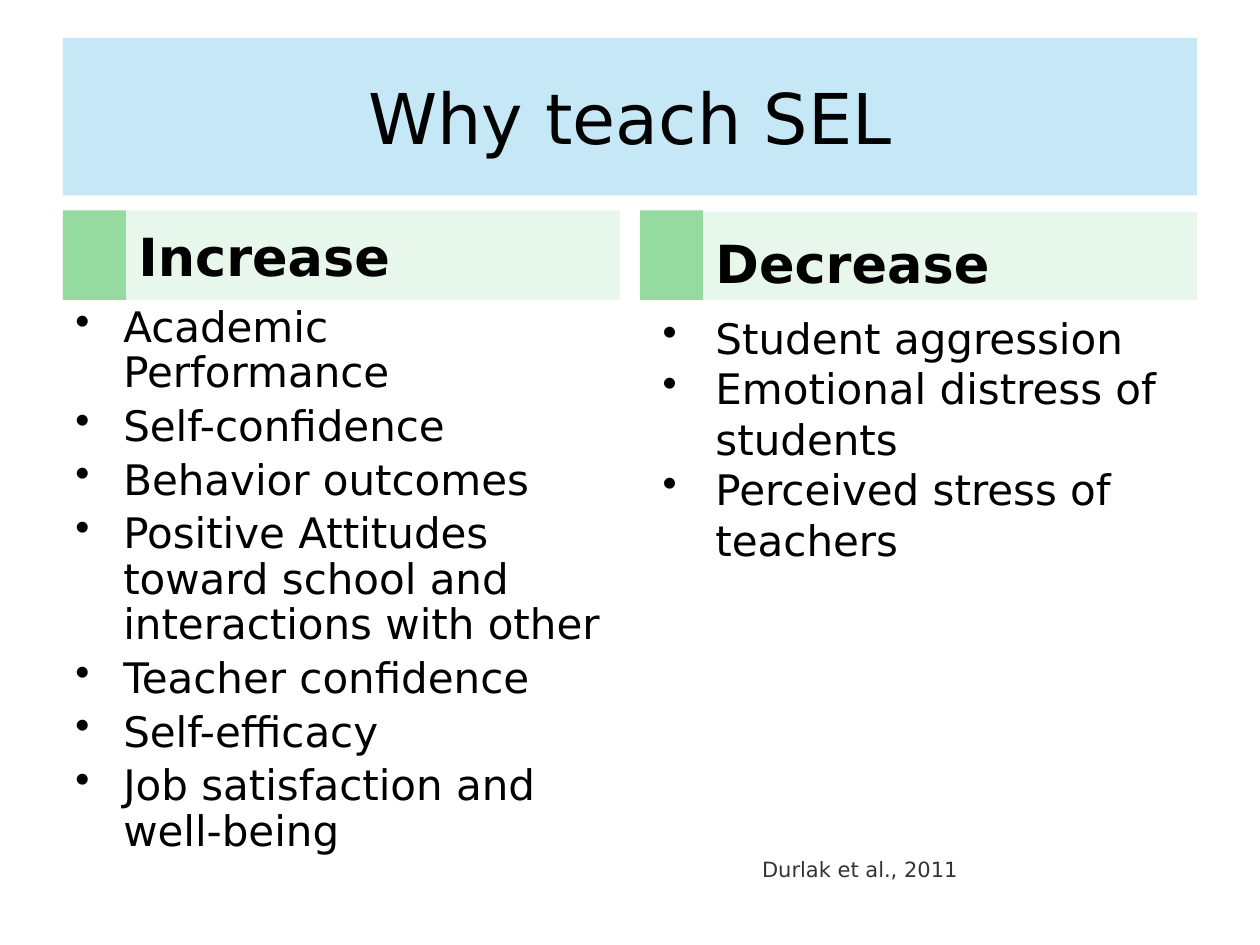
from lxml.etree import SubElement
from pptx import Presentation
from pptx.dml.color import RGBColor
from pptx.enum.shapes import MSO_SHAPE
from pptx.enum.text import MSO_ANCHOR, PP_ALIGN
from pptx.oxml.ns import qn
from pptx.util import Inches, Pt

# Content
TITLE = "Why teach SEL"
CITATION = "Durlak et al., 2011"
COLUMNS = [
    {
        "heading": "Increase",
        "points": [
            "Academic Performance",
            "Self-confidence",
            "Behavior outcomes",
            "Positive Attitudes toward school and interactions with other",
            "Teacher confidence",
            "Self-efficacy",
            "Job satisfaction and well-being",
        ],
        "heading_top": 1.67, "heading_inset": 0.1, "heading_before": 4.2,
        "list_inset": 0.05, "indent": (0.38, -0.38), "line_spacing": 0.9,
        "before_first": 0, "before_rest": 4.8,
    },
    {
        "heading": "Decrease",
        "points": [
            "Student aggression",
            "Emotional distress of students",
            "Perceived stress of teachers",
        ],
        "heading_top": 1.68, "heading_inset": 0.05, "heading_before": 0,
        "list_inset": 0.1, "indent": (0.5, -0.42), "line_spacing": 1.0,
        "before_first": 4.8, "before_rest": 0,
    },
]

THEME = {
    "font": "DejaVu Sans",
    "ink": "000000", "muted": "333333",
    "banner": "A9DCF2", "banner_alpha": 67,
    "marker": "95DA9F", "heading_fill": "E8F7EB",
    "title": 40, "heading": 30, "body": 24, "citation": 12,
}

# Layout in inches
SLIDE_W, SLIDE_H = 10, 7.5
MARGIN = 0.5
COLUMN_W, MARKER_W = 4.42, 0.5
MARKER_TOP, LIST_TOP, LIST_BOTTOM = 1.67, 2.38, 6.7


def set_all(target, values):
    for name, value in values.items():
        setattr(target, name, value)


def add_block(slide, box, color, alpha=None):
    block = slide.shapes.add_shape(MSO_SHAPE.RECTANGLE, *map(Inches, box))
    block.shadow.inherit = False
    block.fill.solid()
    block.fill.fore_color.rgb = RGBColor.from_string(color)
    block.line.fill.background()
    if alpha is not None:
        tint = block.fill._xPr.find(".//" + qn("a:srgbClr"))
        SubElement(tint, qn("a:alpha"), val=str(alpha * 1000))
    return block


def write(shape, lines, size, color="ink", bold=False, inset=0.1,
          anchor=MSO_ANCHOR.TOP, **paragraph_format):
    frame = shape.text_frame
    set_all(frame, {
        "text": "\n".join(lines),
        "word_wrap": True,
        "vertical_anchor": anchor,
        "margin_left": Inches(0.1), "margin_right": Inches(0.1),
        "margin_top": Inches(inset), "margin_bottom": Inches(inset),
    })
    for paragraph in frame.paragraphs:
        set_all(paragraph, {"alignment": PP_ALIGN.LEFT, **paragraph_format})
        for run in paragraph.runs:
            set_all(run.font, {"name": THEME["font"], "size": Pt(THEME[size]), "bold": bold})
            run.font.color.rgb = RGBColor.from_string(THEME[color])
    return frame.paragraphs


def add_bullet(paragraph, indent):
    properties = paragraph._p.get_or_add_pPr()
    left, first = indent
    properties.set("marL", str(Inches(left)))
    properties.set("indent", str(Inches(first)))
    bullet_color = SubElement(properties, qn("a:buClr"))
    SubElement(bullet_color, qn("a:srgbClr"), val=THEME["ink"])
    SubElement(properties, qn("a:buChar"), char="•")


def add_column(slide, left, column):
    # Marker and heading
    add_block(slide, (left, MARKER_TOP, MARKER_W, LIST_TOP - MARKER_TOP), THEME["marker"])
    top = column["heading_top"]
    heading = add_block(slide, (left + MARKER_W, top, COLUMN_W - MARKER_W, LIST_TOP - top),
                        THEME["heading_fill"])
    write(heading, [column["heading"]], "heading", bold=True,
          inset=column["heading_inset"], anchor=MSO_ANCHOR.BOTTOM,
          space_before=Pt(column["heading_before"]))

    # Bulleted list
    box = (left, LIST_TOP, COLUMN_W, LIST_BOTTOM - LIST_TOP)
    points = slide.shapes.add_textbox(*map(Inches, box))
    paragraphs = write(points, column["points"], "body", inset=column["list_inset"],
                       line_spacing=column["line_spacing"],
                       space_before=Pt(column["before_rest"]))
    paragraphs[0].space_before = Pt(column["before_first"])
    for paragraph in paragraphs:
        add_bullet(paragraph, column["indent"])


def main():
    deck = Presentation()
    set_all(deck, {"slide_width": Inches(SLIDE_W), "slide_height": Inches(SLIDE_H)})
    slide = deck.slides.add_slide(deck.slide_layouts[6])

    # Title banner
    banner = add_block(slide, (MARGIN, 0.3, SLIDE_W - 2 * MARGIN, 1.25),
                       THEME["banner"], THEME["banner_alpha"])
    write(banner, [TITLE], "title", anchor=MSO_ANCHOR.MIDDLE, alignment=PP_ALIGN.CENTER)

    # Columns, flush with both margins
    step = SLIDE_W - 2 * MARGIN - COLUMN_W
    for index, column in enumerate(COLUMNS):
        add_column(slide, MARGIN + index * step, column)

    # Citation
    citation = slide.shapes.add_textbox(*map(Inches, (5.95, LIST_BOTTOM, 1.99, 0.55)))
    write(citation, [CITATION], "citation", color="muted")

    deck.save("out.pptx")


if __name__ == "__main__":
    main()
